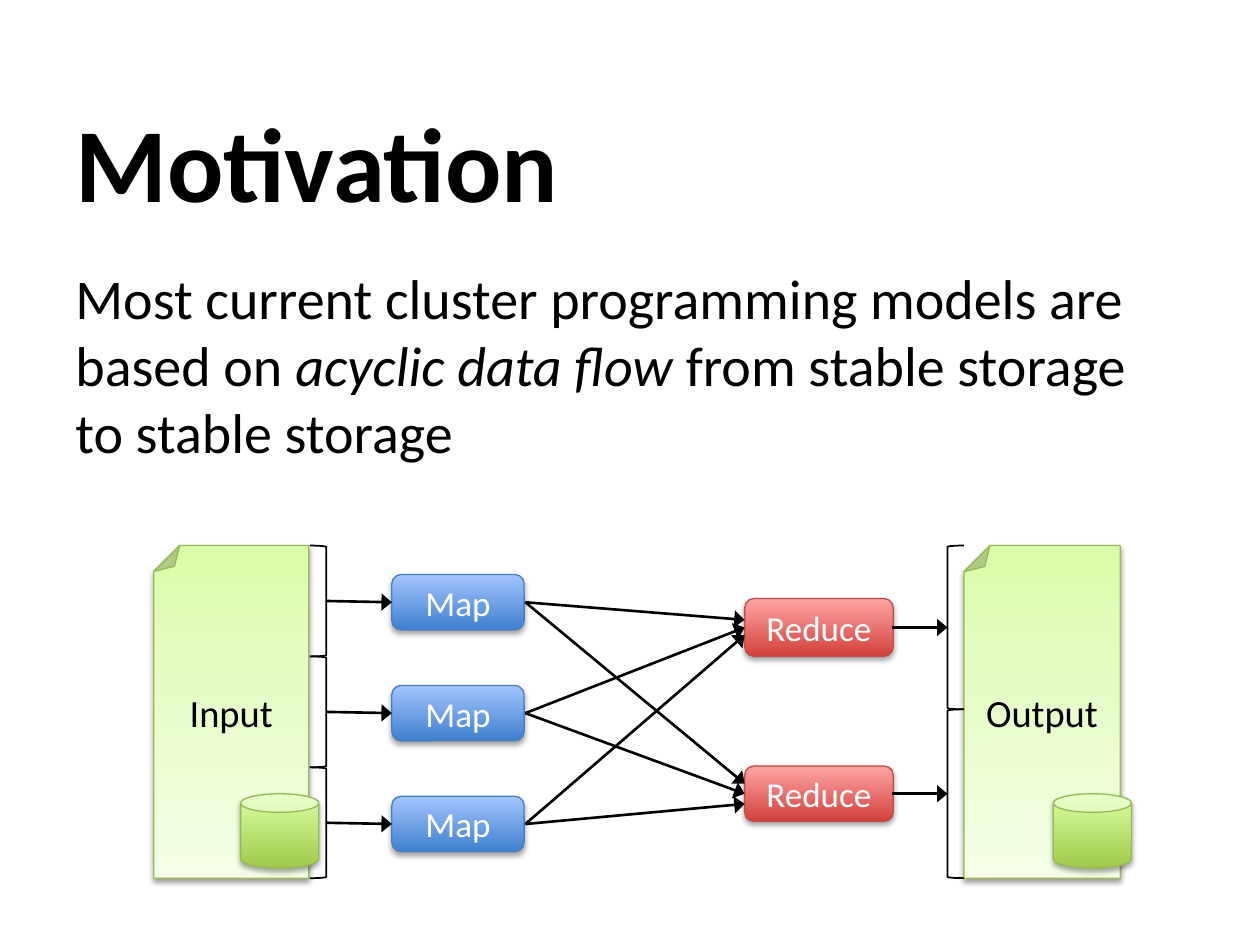
from copy import deepcopy
from lxml import etree
from pptx import Presentation
from pptx.dml.color import RGBColor
from pptx.enum import shapes, text
from pptx.oxml import parse_xml
from pptx.oxml.ns import qn
from pptx.util import Inches, Pt

NS = 'xmlns:a="http://schemas.openxmlformats.org/drawingml/2006/main"'
KIND = shapes.MSO_SHAPE
MID = text.MSO_ANCHOR.MIDDLE
CENTER = text.PP_ALIGN.CENTER
PAGE = dict(g=KIND.FOLDED_CORNER, line="98B955", alpha=38, dist=20000,
            stops=[(0, "DAFDA7"), (0.35, "E4FCC2"), (1, "F5FFE7")])
DISK = dict(g=KIND.CAN, line="98B955", alpha=35, dist=23000,
            stops=[(0, "A0CA4A"), (1, "DAFFA5")])
MAP = dict(DISK, g=KIND.ROUNDED_RECTANGLE, line="4B7EBC",
           stops=[(0, "3F80CE"), (1, "A4C4FF")])
REDUCE = dict(MAP, line="BF4C48", stops=[(0, "D1403C"), (1, "FFA6A5")])


def paint(color, value):
    color.rgb = RGBColor.from_string(value)


def put(item, values):
    for name, value in values.items():
        setattr(item, name, value)


def write(frame, runs, size, ink="000000", bold=False, align=None, anchor=None):
    frame.word_wrap = True
    if anchor is not None:
        frame.vertical_anchor = anchor
    para = frame.paragraphs[0]
    para.alignment = align
    for words, slant in runs:
        run = para.add_run()
        run.text = words
        put(run.font, dict(name="Calibri", size=Pt(size), bold=bold, italic=slant))
        paint(run.font.color, ink)


def label(slide, box, runs, size, **look):
    area = slide.shapes.add_textbox(*map(Inches, box))
    write(area.text_frame, runs, size, **look)


def block(slide, box, style, words=None, turn=0):
    shape = slide.shapes.add_shape(style["g"], *map(Inches, box))
    shape.rotation = turn
    shape.fill.gradient()
    shape.fill.gradient_angle = 90
    stops = shape.element.spPr.find(".//" + qn("a:gsLst"))
    while len(stops) < len(style["stops"]):
        stops.append(deepcopy(stops[0]))
    for stop, (pos, value) in zip(shape.fill.gradient_stops, style["stops"]):
        stop.position = pos
        paint(stop.color, value)
    shape.line.width = Pt(0.75)
    paint(shape.line.color, style["line"])
    shape.shadow.inherit = False
    shape.element.spPr.find(qn("a:effectLst")).append(parse_xml(
        f'<a:outerShdw {NS} blurRad="40000" dist="{style["dist"]}" dir="5400000" '
        f'rotWithShape="0"><a:srgbClr val="000000">'
        f'<a:alpha val="{style["alpha"] * 1000}"/></a:srgbClr></a:outerShdw>'))
    if words:
        write(shape.text_frame, [(words, False)], 20, "FFFFFF",
              align=CENTER, anchor=MID)


def bracket(slide, box, flip=False):
    shape = slide.shapes.add_shape(KIND.RIGHT_BRACKET, *map(Inches, box))
    shape.fill.background()
    shape.line.width = Pt(1)
    paint(shape.line.color, "000000")
    shape.shadow.inherit = False
    if flip:
        shape.element.spPr.find(qn("a:xfrm")).set("flipH", "1")


def arrow(slide, *ends):
    line = slide.shapes.add_connector(shapes.MSO_CONNECTOR.STRAIGHT, *map(Inches, ends))
    line.line.width = Pt(1.5)
    paint(line.line.color, "000000")
    props = line.element.spPr
    etree.SubElement(props.find(qn("a:ln")), qn("a:tailEnd"), type="triangle", w="lg")
    etree.SubElement(props, qn("a:effectLst"))


def heading(slide, box):
    label(slide, box, [("Motivation", False)], 60, bold=True, anchor=MID)


def body(slide, box):
    label(slide, box, [
        ("Most current cluster programming models are based on ", False),
        ("acyclic data flow", True),
        (" from stable storage to stable storage", False)], 32)


def store(slide, box, words):
    left, top, width, height = box
    block(slide, box, PAGE, turn=180)
    label(slide, (left, top + 1.09, width, 0.46), [(words, False)], 22, align=CENTER)


def flow(slide, box):
    left, top, width, height = box
    step = height / 3
    edge, gap = left + 1.24, 0.13
    start, mid, goal = left + 1.89, left + 2.95, left + 4.69
    done, far = left + 5.86, left + 6.3
    store(slide, (left, top, 1.23, height), "Input")
    for row in range(3):
        y = top + row * step
        bracket(slide, (edge, y, gap, step))
        block(slide, (start, y + 0.23, 1.05, 0.44), MAP, "Map")
        arrow(slide, edge + gap, y + 0.44, start, y + 0.45)
    for y, tall, space in ((0.65, 0.46, 0.06), (1.97, 0.44, 0.08)):
        block(slide, (goal, top + y - tall / 2, 1.18, tall), REDUCE, "Reduce")
        for row in range(3):
            arrow(slide, mid, top + row * step + 0.45,
                  goal, top + y + (row - 1) * space)
        arrow(slide, done, top + y, far, top + y)
    store(slide, (far + gap, top, 1.24, height), "Output")
    bracket(slide, (far, top, gap, 1.3), True)
    bracket(slide, (far, top + 1.3, gap, height - 1.3), True)
    for x in (left + 7.14, left + 0.69):
        block(slide, (x, top + 1.97, 0.62, 0.59), DISK)


def main():
    deck = Presentation()
    put(deck, dict(slide_width=Inches(10), slide_height=Inches(7.5)))
    slide = deck.slides.add_slide(deck.slide_layouts[6])
    heading(slide, (0.5, 0.65, 9, 1.25))
    body(slide, (0.5, 2.04, 9, 2.48))
    flow(slide, (1.22, 4.33, 7.67, 2.64))
    deck.save("out.pptx")


if __name__ == "__main__":
    main()
